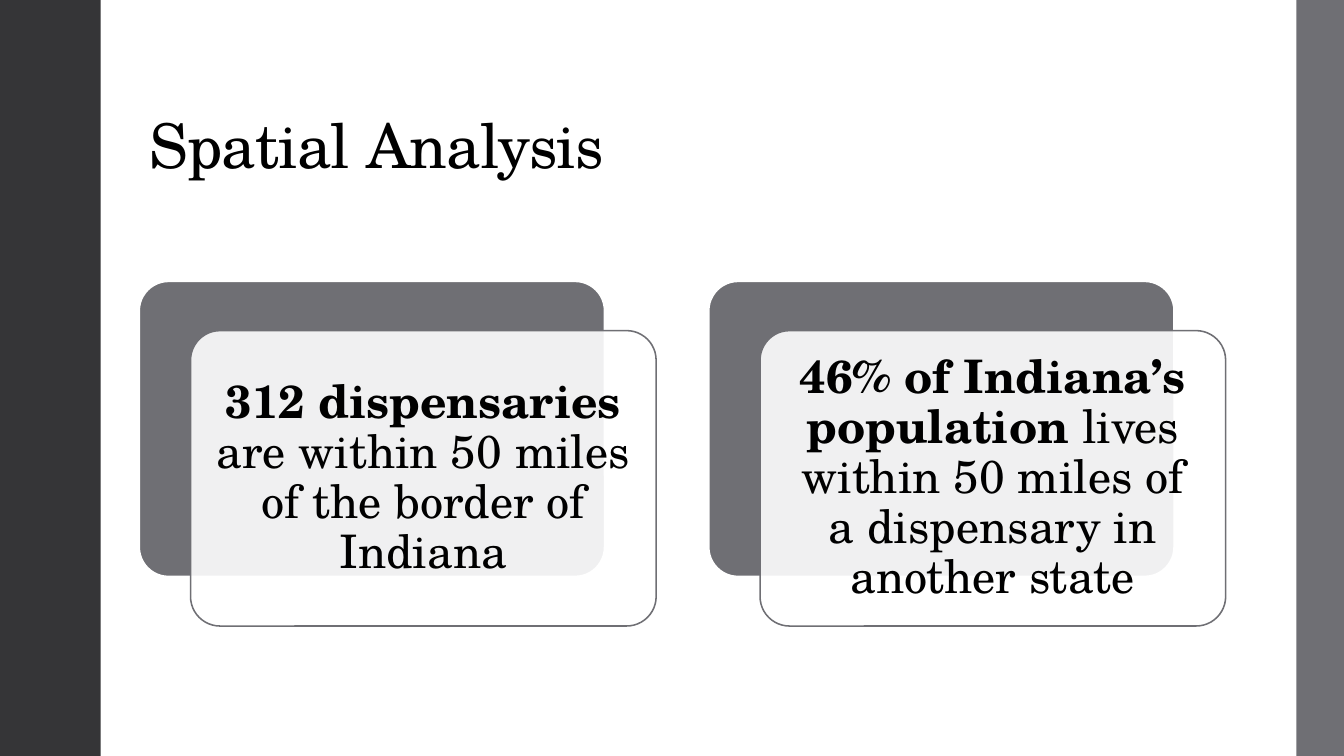
"""Build the Spatial Analysis slide with two layered cards."""
from lxml.etree import SubElement as SubEl
from pptx import Presentation
from pptx.dml.color import RGBColor
from pptx.enum.shapes import MSO_SHAPE as Kind
from pptx.enum.text import MSO_ANCHOR as Anchor, MSO_AUTO_SIZE as Fit, PP_ALIGN as Align
from pptx.oxml.ns import qn
from pptx.util import Pt

FONT = "TeX Gyre Schola"
BLACK = RGBColor(0x00, 0x00, 0x00)
WHITE = RGBColor(0xFF, 0xFF, 0xFF)
DARK = RGBColor(0x35, 0x35, 0x37)
GRAY = RGBColor(0x6F, 0x6F, 0x74)

WIDE, HIGH = 960, 540
LEFT, TOP = 99.36, 200.9
CARD_W, CARD_H = 332.6, 211
STEP, SHIFT_X, SHIFT_Y = 406.8, 36.72, 35.28

CARDS = [
    ("312 dispensaries ", "are within 50 miles of the border of Indiana"),
    ("46% of Indiana’s population ", "lives within 50 miles of a dispensary in another state"),
]


def add_run(para, text, size, bold=False):
    run = para.add_run()
    run.text = text
    run.font.name = FONT
    run.font.size = Pt(size)
    run.font.bold = bold
    run.font.color.rgb = BLACK
    return run


def add_title(slide, text):
    title = slide.shapes.title
    title.left, title.top = Pt(LEFT), Pt(28.8)
    title.width, title.height = Pt(776), Pt(104.4)
    frame = title.text_frame
    frame.auto_size = Fit.NONE
    frame.word_wrap = True
    frame.vertical_anchor = Anchor.BOTTOM
    para = frame.paragraphs[0]
    para.alignment = Align.LEFT
    para.line_spacing = 0.9
    run = add_run(para, text, 44)
    run.font._element.set("spc", "-50")


def add_block(slide, kind, box, fill):
    block = slide.shapes.add_shape(kind, *map(Pt, box))
    block.shadow.inherit = False
    block.fill.solid()
    block.fill.fore_color.rgb = fill
    block.line.fill.background()
    return block


def add_panel(slide, left, top, fill, edge, weight):
    panel = add_block(slide, Kind.ROUNDED_RECTANGLE, (left, top, CARD_W, CARD_H), fill)
    panel.adjustments[0] = 0.1
    panel.line.color.rgb = edge
    panel.line.width = Pt(weight)
    return panel


def fade(shape, share):
    color = shape.fill._xPr.find(qn("a:solidFill"))[0]
    SubEl(color, qn("a:alpha")).set("val", str(share * 1000))


def add_card(slide, left, lead, rest):
    add_panel(slide, left, TOP, GRAY, WHITE, 1.35)
    front = add_panel(slide, left + SHIFT_X, TOP + SHIFT_Y, WHITE, GRAY, 1.1)
    fade(front, 90)
    frame = front.text_frame
    frame.word_wrap = True
    frame.vertical_anchor = Anchor.MIDDLE
    frame.margin_left = frame.margin_right = Pt(10)
    frame.margin_top = frame.margin_bottom = Pt(10)
    para = frame.paragraphs[0]
    para.alignment = Align.CENTER
    para.line_spacing = 0.9
    add_run(para, lead, 33, bold=True)
    add_run(para, rest, 33)


def main():
    deck = Presentation()
    deck.slide_width, deck.slide_height = Pt(WIDE), Pt(HIGH)
    slide = deck.slides.add_slide(deck.slide_layouts[5])
    add_title(slide, "Spatial Analysis")
    add_block(slide, Kind.RECTANGLE, (0, 0, 72, HIGH), DARK)
    add_block(slide, Kind.RECTANGLE, (926, 0, WIDE - 926, HIGH), GRAY)
    for i, (lead, rest) in enumerate(CARDS):
        add_card(slide, LEFT + i * STEP, lead, rest)
    deck.save("out.pptx")


if __name__ == "__main__":
    main()
